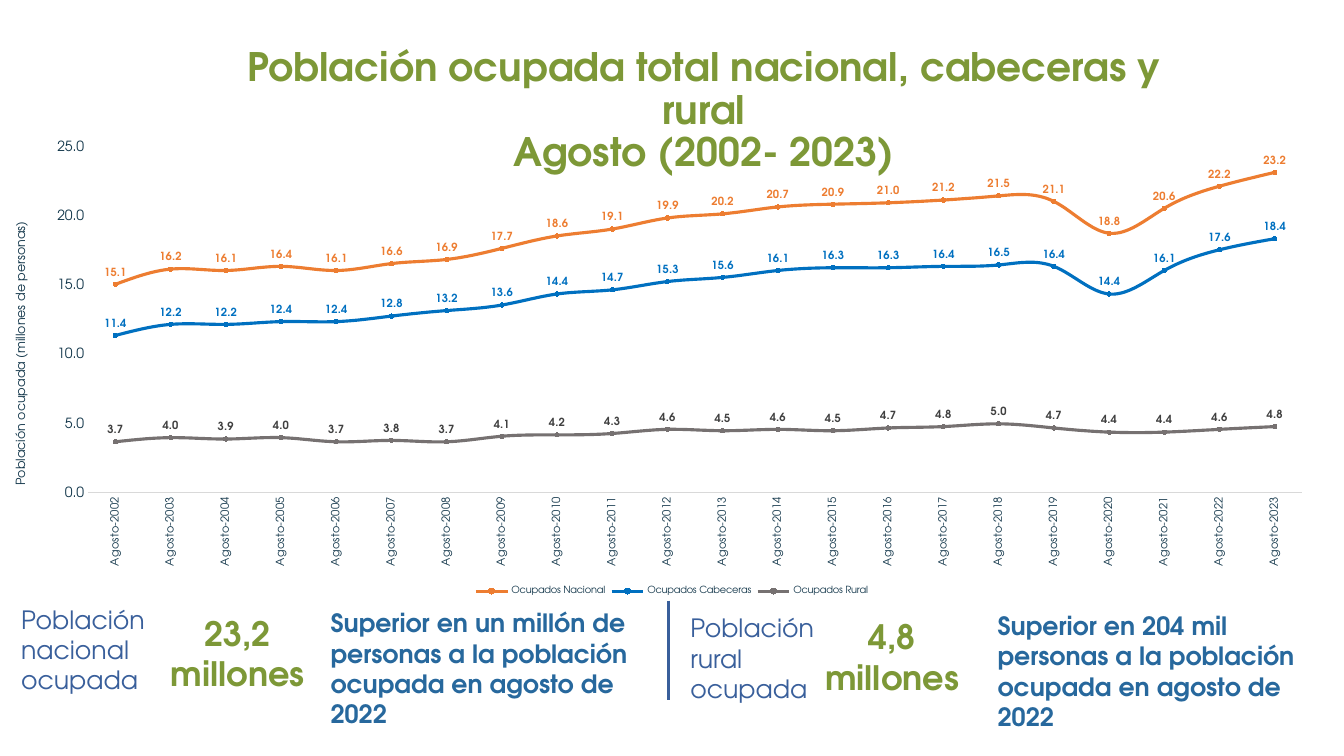
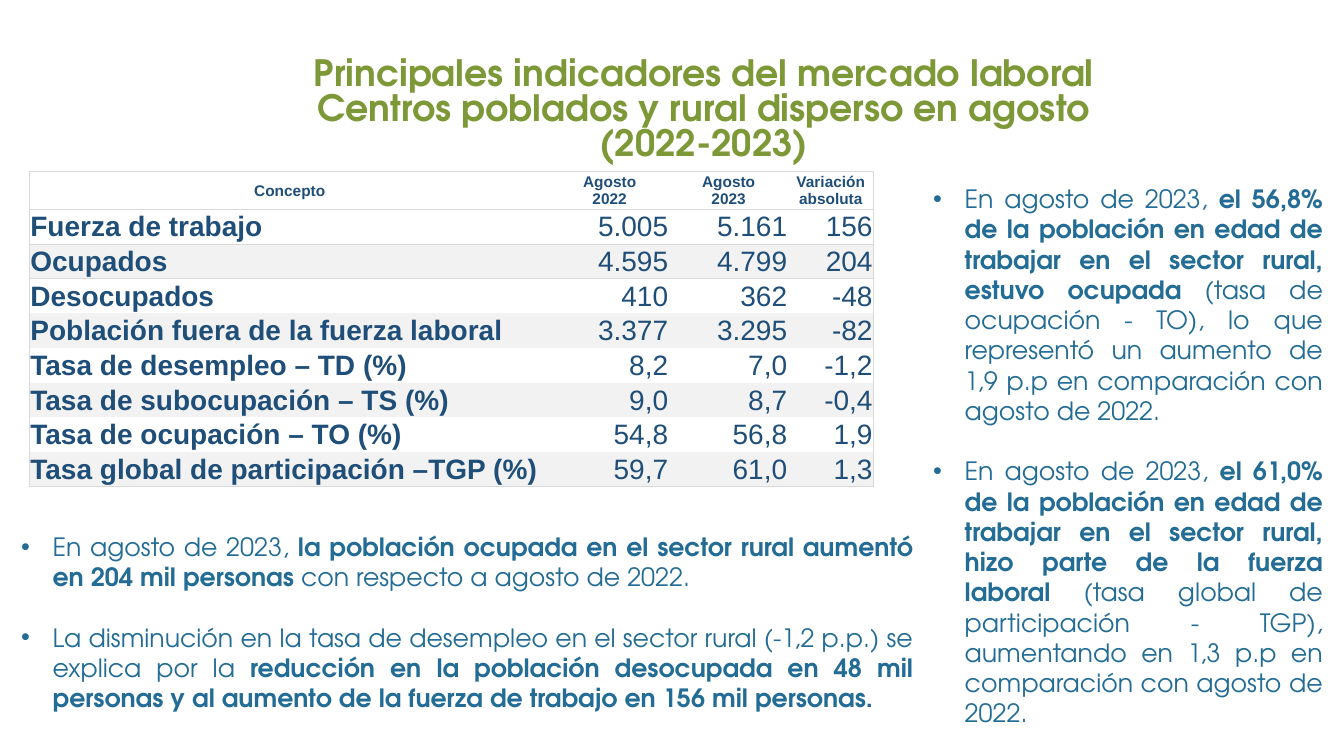
from lxml import etree
from pptx import Presentation
from pptx.chart import data as chartdata
from pptx.dml import color as colors
from pptx.enum import chart as charts, shapes, text
from pptx.oxml import ns, parse_xml
from pptx.util import Pt

FACE = "TeX Gyre Adventor"
GREEN, SLATE, BLUE, TEAL = "7D9837", "395F9B", "27689D", "236C95"
INK, NAVY, GRID, BAND = "12364A", "1F4E78", "D9D9D9", "F2F2F2"
CENTER, RIGHT, JUSTIFY = text.PP_ALIGN.CENTER, text.PP_ALIGN.RIGHT, text.PP_ALIGN.JUSTIFY
TITLE = {"size": 28, "color": GREEN, "bold": True}
LABEL = {"size": 18, "color": SLATE}
FIGURE = {"size": 24, "color": GREEN, "bold": True}
REMARK = {"size": 18, "color": BLUE, "bold": True}
BULLET = {"size": 18, "color": TEAL}


def rgb(value):
    return colors.RGBColor.from_string(value)


def write(frame, lines, style, **layout):
    for index, line in enumerate(lines):
        para = frame.paragraphs[0] if index == 0 else frame.add_paragraph()
        for name, value in layout.items():
            setattr(para, name, value)
        for part, words in enumerate(line.split("|")):
            span = para.add_run()
            span.text = words
            span.font.name = style.get("face", FACE)
            span.font.size = Pt(style["size"])
            span.font.bold = style.get("bold", False) or part % 2 == 1
            span.font.color.rgb = rgb(style["color"])


deck = Presentation()
deck.slide_width, deck.slide_height = Pt(960), Pt(540)

titles = [
    (["Población ocupada total nacional, cabeceras y rural", "Agosto (2002- 2023)"], 28, 0.9),
    (["Principales indicadores del mercado laboral",
      "Centros poblados y rural disperso en agosto", "(2022-2023)"], 25.9, 0.8),
]
pages = []
for lines, size, spacing in titles:
    page = deck.slides.add_slide(deck.slide_layouts[5])
    title = page.shapes.title
    place = {"left": 146, "top": 36.5, "width": 713.5, "height": 86}
    for name, value in place.items():
        setattr(title, name, Pt(value))
    title.text_frame.auto_size = text.MSO_AUTO_SIZE.NONE
    title.text_frame.vertical_anchor = text.MSO_ANCHOR.MIDDLE
    write(title.text_frame, lines, TITLE | {"size": size},
          alignment=CENTER, line_spacing=spacing)
    pages.append(page)
trend_page, table_page = pages

notes = [
    (8, 428, 116, 73, ["Población nacional", "ocupada"], LABEL),
    (108.5, 434, 122.5, 65.5, ["23,2 millones"], FIGURE),
    (229, 430.5, 253, 73,
     ["Superior en un millón de personas a la población ocupada en agosto de 2022"], REMARK),
    (486, 434, 116, 73, ["Población rural", "ocupada"], LABEL),
    (576, 436.5, 122.5, 65.5, ["4,8 millones"], FIGURE),
    (705.5, 432.5, 253, 73,
     ["Superior en 204 mil personas a la población ocupada en agosto de 2022"], REMARK),
]
for left, top, width, height, lines, style in notes:
    box = trend_page.shapes.add_textbox(Pt(left), Pt(top), Pt(width), Pt(height))
    box.text_frame.word_wrap = True
    box.text_frame.auto_size = text.MSO_AUTO_SIZE.SHAPE_TO_FIT_TEXT
    write(box.text_frame, lines, style, alignment=CENTER if style is FIGURE else None)

divider = trend_page.shapes.add_connector(
    shapes.MSO_CONNECTOR.STRAIGHT, Pt(477.5), Pt(429), Pt(477.5), Pt(500))
divider.line.color.rgb = rgb(SLATE)
divider.line.width = Pt(2.25)
etree.SubElement(divider._element.spPr, ns.qn("a:effectLst"))

series_rows = [
    ("Ocupados Nacional", "ED7D31", "ED7D31",
     [15.1, 16.2, 16.1, 16.4, 16.1, 16.6, 16.9, 17.7, 18.6, 19.1, 19.9,
      20.2, 20.7, 20.9, 21, 21.2, 21.5, 21.1, 18.8, 20.6, 22.2, 23.2]),
    ("Ocupados Cabeceras", "0070C0", "0070C0",
     [11.4, 12.2, 12.2, 12.4, 12.4, 12.8, 13.2, 13.6, 14.4, 14.7, 15.3,
      15.6, 16.1, 16.3, 16.3, 16.4, 16.5, 16.4, 14.4, 16.1, 17.6, 18.4]),
    ("Ocupados Rural", "767171", "404040",
     [3.7, 4, 3.9, 4, 3.7, 3.8, 3.7, 4.1, 4.2, 4.3, 4.6,
      4.5, 4.6, 4.5, 4.7, 4.8, 5, 4.7, 4.4, 4.4, 4.6, 4.8]),
]
figures = chartdata.CategoryChartData(number_format="0.0")
figures.categories = [f"Agosto-{year}" for year in range(2002, 2024)]
for name, _, _, values in series_rows:
    figures.add_series(name, values)
chart = trend_page.shapes.add_chart(
    charts.XL_CHART_TYPE.LINE_MARKERS, Pt(8), Pt(99.5), Pt(944), Pt(329), figures).chart
chart.has_title = False
chart.has_legend = True
chart.legend.position = charts.XL_LEGEND_POSITION.BOTTOM
chart.legend.include_in_layout = False
chart.plots[0].vary_by_categories = False

months, people = chart.category_axis, chart.value_axis
people.minimum_scale, people.maximum_scale, people.major_unit = 0, 25, 5
people.tick_labels.number_format = "0.0"
people.tick_labels.number_format_is_linked = False
people.format.line.fill.background()
months.format.line.color.rgb = rgb(GRID)
months.format.line.width = Pt(0.75)
for axis in (months, people):
    axis.has_major_gridlines = False
    axis.major_tick_mark = charts.XL_TICK_MARK.NONE
people_title = people.axis_title.text_frame
write(people_title, ["Población ocupada (millones de personas)"], {"size": 9, "color": INK})

fonts = [(chart.font, 8), (months.tick_labels.font, 8),
         (people.tick_labels.font, 10), (chart.legend.font, 7)]
for font, size in fonts:
    font.name, font.size = FACE, Pt(size)
    font.color.rgb = rgb(INK)
for body in (months._element.find(ns.qn("c:txPr")), people_title._txBody):
    turned = body.find(ns.qn("a:bodyPr"))
    turned.set("rot", "-5400000")
    turned.set("vert", "horz")

for series, (_, tint, label_tint, _) in zip(chart.plots[0].series, series_rows):
    series.smooth = True
    series.format.line.color.rgb = rgb(tint)
    series.format.line.width = Pt(2.25)
    series.marker.style = charts.XL_MARKER_STYLE.CIRCLE
    series.marker.size = 3
    series.marker.format.fill.solid()
    series.marker.format.fill.fore_color.rgb = rgb(tint)
    series.marker.format.line.color.rgb = rgb(tint)
    labels = series.data_labels
    settings = {"show_value": True, "position": charts.XL_LABEL_POSITION.ABOVE,
                "number_format": "0.0", "number_format_is_linked": False}
    for name, value in settings.items():
        setattr(labels, name, value)
    labels.font.name, labels.font.size, labels.font.bold = FACE, Pt(8), True
    labels.font.color.rgb = rgb(label_tint)

plot_area = chart._chartSpace.find(".//" + ns.qn("c:plotArea"))
for old in plot_area.findall(ns.qn("c:layout")):
    plot_area.remove(old)
plot_area.insert(0, parse_xml(
    f'<c:layout {ns.nsdecls("c")}><c:manualLayout><c:layoutTarget val="inner"/>'
    '<c:xMode val="edge"/><c:yMode val="edge"/><c:x val="0.058"/><c:y val="0.018"/>'
    '<c:w val="0.919"/><c:h val="0.75"/></c:manualLayout></c:layout>'))
chart._chartSpace.find(ns.qn("c:chart")).addnext(parse_xml(
    f'<c:spPr {ns.nsdecls("c", "a")}><a:noFill/><a:ln><a:noFill/></a:ln></c:spPr>'))

rows = [
    ["Concepto", "Agosto\n2022", "Agosto\n2023", "Variación absoluta"],
    ["Fuerza de trabajo", "5.005", "5.161", "156"],
    ["Ocupados", "4.595", "4.799", "204"],
    ["Desocupados", "410", "362", "-48"],
    ["Población fuera de la fuerza laboral", "3.377", "3.295", "-82"],
    ["Tasa de desempleo – TD (%)", "8,2", "7,0", "-1,2"],
    ["Tasa de subocupación – TS (%)", "9,0", "8,7", "-0,4"],
    ["Tasa de ocupación – TO (%)", "54,8", "56,8", "1,9"],
    ["Tasa global de participación –TGP (%)", "59,7", "61,0", "1,3"],
]
widths = [372, 85, 85, 61]
heights = [27] + [24.8] * 8
table = table_page.shapes.add_table(
    len(rows), len(widths), Pt(21), Pt(122.5), Pt(sum(widths)), Pt(sum(heights))).table
table.first_row = table.horz_banding = False
table._tbl.tblPr.find(ns.qn("a:tableStyleId")).text = "{2D5ABB26-0587-4C30-8999-92F81FD0307C}"
for column, width in zip(table.columns, widths):
    column.width = Pt(width)
for row, height in zip(table.rows, heights):
    row.height = Pt(height)
for r, values in enumerate(rows):
    for c, value in enumerate(values):
        cell = table.cell(r, c)
        cell.margin_left = cell.margin_right = cell.margin_top = Pt(0.7)
        cell.margin_bottom = Pt(0)
        cell.vertical_anchor = text.MSO_ANCHOR.MIDDLE
        style = {"face": "Arial", "size": 20 if r else 11, "color": NAVY,
                 "bold": r == 0 or c == 0}
        align = CENTER if r == 0 else RIGHT if c else text.PP_ALIGN.LEFT
        write(cell.text_frame, value.split("\n"), style, alignment=align)
        if r and r % 2 == 0:
            cell.fill.solid()
            cell.fill.fore_color.rgb = rgb(BAND)
        else:
            cell.fill.background()
        edges = {"lnL": c == 0, "lnR": c == 3, "lnT": r < 3, "lnB": r in (0, 1, 8)}
        drawn = [edge for edge, shown in edges.items() if shown]
        for index, edge in enumerate(drawn):
            cell._tc.get_or_add_tcPr().insert(index, parse_xml(
                f'<a:{edge} {ns.nsdecls("a")} w="6350"><a:solidFill>'
                f'<a:srgbClr val="{GRID}"/></a:solidFill></a:{edge}>'))

findings = [
    (8, 376, 651.5, 138, [
        "En agosto de 2023, |la población ocupada en el sector rural aumentó en 204 mil "
        "personas |con respecto a agosto de 2022.",
        "La disminución en la tasa de desempleo en el sector rural (-1,2 p.p.) se explica por "
        "la |reducción en la población desocupada en 48 mil personas y al aumento de la "
        "fuerza de trabajo en 156 mil personas."]),
    (659.5, 127.5, 292.5, 378, [
        "En agosto de 2023, |el 56,8% de la población en edad de trabajar en el sector rural, "
        "estuvo ocupada |(tasa de ocupación - TO), lo que representó un aumento de 1,9 p.p "
        "en comparación con agosto de 2022.",
        "En agosto de 2023, |el 61,0% de la población en edad de trabajar en el sector rural, "
        "hizo parte de la fuerza laboral |(tasa global de participación - TGP), aumentando "
        "en 1,3 p.p en comparación con agosto de 2022."]),
]
for left, top, width, height, lines in findings:
    box = table_page.shapes.add_textbox(Pt(left), Pt(top), Pt(width), Pt(height))
    box.text_frame.word_wrap = True
    box.text_frame.auto_size = text.MSO_AUTO_SIZE.SHAPE_TO_FIT_TEXT
    write(box.text_frame, lines, BULLET, alignment=JUSTIFY)
    box.text_frame.paragraphs[1].space_before = Pt(21.6)
    for para in box.text_frame.paragraphs:
        properties = para._p.get_or_add_pPr()
        properties.set("marL", str(Pt(22.5)))
        properties.set("indent", str(-Pt(22.5)))
        etree.SubElement(properties, ns.qn("a:buFont")).set("typeface", "Arial")
        etree.SubElement(properties, ns.qn("a:buChar")).set("char", "•")

deck.save("out.pptx")
